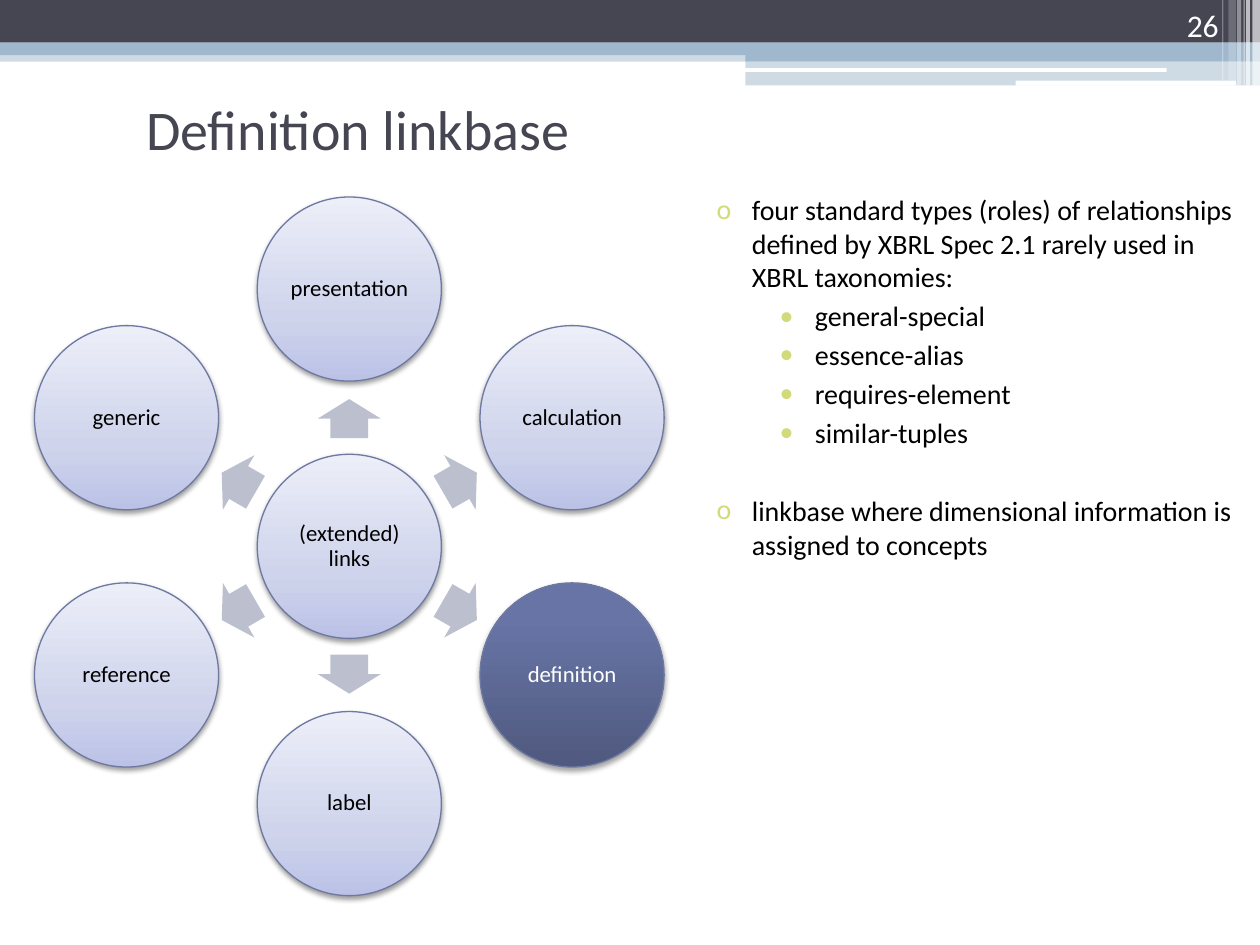
from copy import deepcopy
from math import cos, radians, sin

from pptx import Presentation
from pptx.dml.color import RGBColor
from pptx.enum.shapes import MSO_SHAPE
from pptx.enum.text import MSO_ANCHOR, PP_ALIGN
from pptx.oxml import parse_xml
from pptx.oxml.ns import nsdecls, qn
from pptx.util import Pt

RECT, ROUNDED = MSO_SHAPE.RECTANGLE, MSO_SHAPE.ROUNDED_RECTANGLE
CIRCLE, ARROW = MSO_SHAPE.OVAL, MSO_SHAPE.RIGHT_ARROW
LEFT, CENTER, RIGHT = PP_ALIGN.LEFT, PP_ALIGN.CENTER, PP_ALIGN.RIGHT
TOP, MIDDLE, BOTTOM = MSO_ANCHOR.TOP, MSO_ANCHOR.MIDDLE, MSO_ANCHOR.BOTTOM

COLORS = {
    "dark": "464653", "blue": "9FB8CD", "white": "FFFFFF", "black": "000000",
    "outline": "6E79A1", "arrow": "BCBFCE", "bullet": "D2DA7A",
}
PALE_STOPS = [(0, "BBC2E6"), (0.35, "CFD4EC"), (1, "ECEEF8")]
DEEP_STOPS = [(0, "50597F"), (0.8, "6774A5"), (1, "6774A7")]

# left, top, width, height, colour, opacity in percent
BANDS = [
    (0, 28.8, 720, 6.5, "blue", 50),
    (0, 0, 720, 24.4, "dark", 100),
    (0, 24.4, 720, 7.2, "blue", 100),
    (426, 28, 294, 7, "blue", 100),
    (426, 34.6, 294, 14.2, "blue", 50),
]
WHITE_LINES = [(425.5, 38.9, 241.2, 2.2), (580.3, 46.1, 126, 2.9)]
# left, width, height, opacity in percent
STRIPES = [
    (715.7, 4.3, 49, 65), (712.1, 2.2, 49, 65), (710.6, 0.7, 49, 60),
    (707, 2.2, 49, 40), (702, 4.3, 46.1, 20), (698.4, 0.7, 46.1, 30),
]

HUB_X, HUB_Y = 199.6, 312.2
DIAMETER = 105.2
CIRCLE_RADIUS, ARROW_RADIUS = 147, 73
LINKBASES = ["presentation", "calculation", "definition",
             "label", "reference", "generic"]

FIRST_POINT = ("four standard types (roles) of relationships defined by "
               "XBRL Spec 2.1 rarely used in XBRL taxonomies:")
ROLES = ["general-special", "essence-alias", "requires-element", "similar-tuples"]
LAST_POINT = "linkbase where dimensional information is assigned to concepts"


class SlideBuilder:
    font = "Calibri"

    def __init__(self, slide):
        self.slide = slide

    def rgb(self, name):
        return RGBColor.from_string(COLORS.get(name, name))

    def shape(self, kind, left, top, width, height, color=None, opacity=100):
        shape = self.slide.shapes.add_shape(
            kind, Pt(left), Pt(top), Pt(width), Pt(height))
        shape.shadow.inherit = False
        shape.line.fill.background()
        if color:
            shape.fill.solid()
            shape.fill.fore_color.rgb = self.rgb(color)
        if opacity < 100:
            solid = shape._element.spPr.find(qn("a:solidFill"))
            solid.find(qn("a:srgbClr")).append(parse_xml(
                f'<a:alpha {nsdecls("a")} val="{opacity * 1000}"/>'))
        return shape

    def frame(self, box, anchor, margin=None):
        frame = box.text_frame
        frame.word_wrap = True
        frame.vertical_anchor = anchor
        if margin is not None:
            for side in ("left", "top", "right", "bottom"):
                setattr(frame, f"margin_{side}", Pt(margin))
        return frame

    def fill_para(self, para, text, size, color, **formats):
        para.text = text
        for name, value in formats.items():
            setattr(para, name, value)
        for span in para.runs:
            for name, value in {"name": self.font, "size": Pt(size)}.items():
                setattr(span.font, name, value)
            span.font.color.rgb = self.rgb(color)
        for line_break in para._p.findall(qn("a:br")):
            line_break.append(deepcopy(para.runs[0]._r.find(qn("a:rPr"))))

    def title(self, text, left, top, width, height):
        box = self.slide.shapes.title
        box.left, box.top = Pt(left), Pt(top)
        box.width, box.height = Pt(width), Pt(height)
        frame = self.frame(box, MIDDLE)
        self.fill_para(frame.paragraphs[0], text, 32, "dark", alignment=LEFT)

    def text_box(self, left, top, width, height, anchor):
        box = self.slide.shapes.add_textbox(
            Pt(left), Pt(top), Pt(width), Pt(height))
        return self.frame(box, anchor)

    def circle(self, text, center_x, center_y, stops, color, shadow):
        """Draw a shaded, labelled circle; shadow is (opacity, distance)."""
        circle = self.shape(CIRCLE, center_x - DIAMETER / 2,
                            center_y - DIAMETER / 2, DIAMETER, DIAMETER)
        circle.line.color.rgb = self.rgb("outline")
        circle.line.width = Pt(0.75)
        circle.fill.gradient()
        circle.fill.gradient_angle = 90
        properties = circle._element.spPr
        stop_list = properties.find(f".//{qn('a:gsLst')}")
        stop_list.append(deepcopy(stop_list[0]))
        for stop, (position, tone) in zip(circle.fill.gradient_stops, stops):
            stop.position = position
            stop.color.rgb = self.rgb(tone)
        opacity, distance = shadow
        properties.find(qn("a:effectLst")).append(parse_xml(
            f'<a:outerShdw {nsdecls("a")} blurRad="{Pt(3.1)}" '
            f'dist="{Pt(distance)}" dir="5400000" rotWithShape="0">'
            f'<a:srgbClr val="{COLORS["black"]}">'
            f'<a:alpha val="{opacity * 1000}"/></a:srgbClr></a:outerShdw>'))
        frame = self.frame(circle, MIDDLE, margin=1.4)
        self.fill_para(frame.paragraphs[0], text, 13, color,
                       alignment=CENTER, line_spacing=0.9)

    def arrow(self, center_x, center_y, angle):
        width, height = 22.3, 36
        arrow = self.shape(ARROW, center_x - width / 2, center_y - height / 2,
                           width, height, "arrow")
        arrow.adjustments[0], arrow.adjustments[1] = 0.6, 0.5
        arrow.rotation = angle % 360

    def bullet(self, para, text, mark, indent, level=0, space_before=3):
        self.fill_para(para, text, 16, "black", alignment=LEFT, level=level,
                       space_before=Pt(space_before))
        properties = para._p.get_or_add_pPr()
        properties.set("marL", str(Pt(indent)))
        properties.set("indent", str(-Pt(20.2)))
        for xml in (f'<a:buClr {nsdecls("a")}>'
                    f'<a:srgbClr val="{COLORS["bullet"]}"/></a:buClr>',
                    f'<a:buFont {nsdecls("a")} typeface="{self.font}"/>',
                    f'<a:buChar {nsdecls("a")} char="{mark}"/>'):
            properties.append(parse_xml(xml))


def draw_header(builder):
    for left, top, width, height, color, opacity in BANDS:
        builder.shape(RECT, left, top, width, height, color, opacity)
    for place in WHITE_LINES:
        builder.shape(ROUNDED, *place, "white")
    for left, width, height, opacity in STRIPES:
        builder.shape(RECT, left, 0, width, height, "white", opacity)
    number = builder.text_box(643.7, 0, 59.8, 28.8, BOTTOM)
    builder.fill_para(number.paragraphs[0], "26", 18, "white", alignment=RIGHT)


def draw_wheel(builder):
    pale = (PALE_STOPS, "black", (38, 1.6))
    deep = (DEEP_STOPS, "white", (35, 1.8))
    builder.circle("(extended)\nlinks", HUB_X, HUB_Y, *pale)
    for index, name in enumerate(LINKBASES):
        angle = index * 360 / len(LINKBASES) - 90
        across, down = cos(radians(angle)), sin(radians(angle))
        builder.arrow(HUB_X + ARROW_RADIUS * across,
                      HUB_Y + ARROW_RADIUS * down, angle)
        builder.circle(name, HUB_X + CIRCLE_RADIUS * across,
                       HUB_Y + CIRCLE_RADIUS * down,
                       *(deep if name == "definition" else pale))


def draw_points(builder):
    frame = builder.text_box(393.8, 106.6, 326.2, 433.4, TOP)
    builder.bullet(frame.paragraphs[0], FIRST_POINT, "o", 28.8)
    for role in ROLES:
        builder.bullet(frame.add_paragraph(), role, "•", 64.8, level=1)
    builder.bullet(frame.add_paragraph(), LAST_POINT, "o", 28.8, space_before=25.5)


def main():
    deck = Presentation()
    deck.slide_width, deck.slide_height = Pt(720), Pt(540)
    builder = SlideBuilder(deck.slides.add_slide(deck.slide_layouts[5]))
    draw_header(builder)
    builder.title("Definition linkbase", 76.3, 33.8, 620.6, 78.5)
    draw_wheel(builder)
    draw_points(builder)
    deck.save("out.pptx")


if __name__ == "__main__":
    main()
